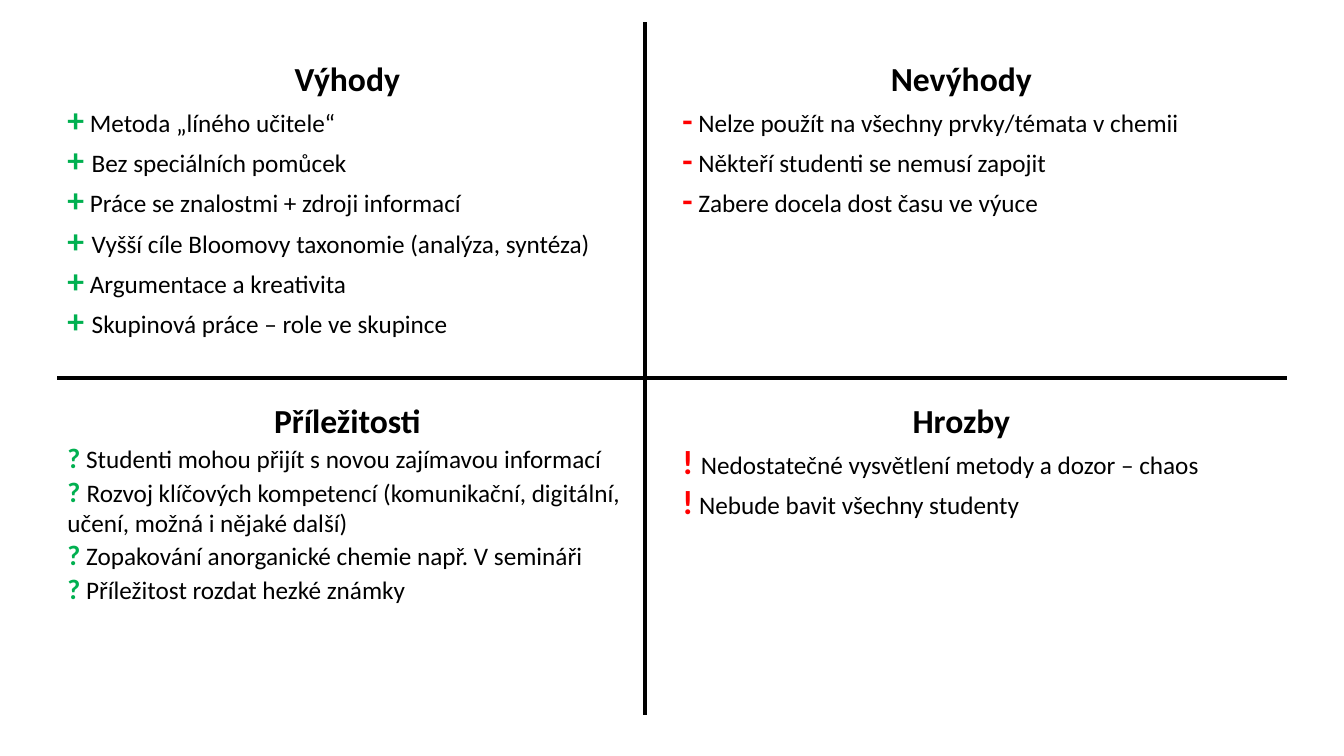
from lxml import etree
from pptx import Presentation
from pptx.dml.color import RGBColor
from pptx.enum import shapes, text
from pptx.oxml.ns import qn
from pptx.util import Inches, Pt

BLACK, GREEN, RED = "000000", "00B050", "FF0000"
LEFT, RIGHT = (0.57, 5.75), (6.67, 5.73)  # column start and width
TOP, BOTTOM = 0.53, 3.92

# Heading, column, top, height, mark colour, mark size, items.
# A bar parts the bold mark from the plain text.
QUADRANTS = [
    ("Nevýhody", RIGHT, TOP, 2.52, RED, 24, [
        "-| Nelze použít na všechny prvky/témata v chemii",
        "-| Někteří studenti se nemusí zapojit",
        "-| Zabere docela dost času ve výuce",
    ]),
    ("Výhody", LEFT, TOP, 2.93, GREEN, 24, [
        "+| Metoda „líného učitele“",
        "+ |Bez speciálních pomůcek",
        "+| Práce se znalostmi + zdroji informací",
        "+ |Vyšší cíle Bloomovy taxonomie (analýza, syntéza)",
        "+| Argumentace a kreativita",
        "+ |Skupinová práce – role ve skupince",
    ]),
    ("Příležitosti", LEFT, BOTTOM, 2.42, GREEN, 20, [
        "?| Studenti mohou přijít s novou zajímavou informací",
        "? |Rozvoj klíčových kompetencí (komunikační, digitální, "
        "učení, možná i nějaké další)",
        "?| Zopakování anorganické chemie např. V semináři",
        "?| Příležitost rozdat hezké známky",
    ]),
    ("Hrozby", RIGHT, BOTTOM, 1.62, RED, 24, [
        "! |Nedostatečné vysvětlení metody a dozor – chaos",
        "!| Nebude bavit všechny studenty",
    ]),
]


def color(code):
    return RGBColor.from_string(code)


class Board:
    """Holds the style and the current page."""
    font = "Calibri"
    heading_size = 24
    text_size = 18
    line_width = 3

    def __init__(self, page):
        self.page = page

    def line(self, x1, y1, x2, y2):
        line = self.page.shapes.add_connector(
            shapes.MSO_CONNECTOR.STRAIGHT,
            Inches(x1), Inches(y1), Inches(x2), Inches(y2))
        line.line.color.rgb = color(BLACK)
        line.line.width = Pt(self.line_width)
        etree.SubElement(line.element.spPr, qn("a:effectLst"))

    def span(self, para, words, size, code, bold):
        span = para.add_run()
        span.text = words
        span.font.name = self.font
        span.font.size = Pt(size)
        span.font.bold = bold
        span.font.color.rgb = color(code)

    def quadrant(self, heading, column, top, height, code, mark_size, items):
        left, width = column
        box = self.page.shapes.add_textbox(
            Inches(left), Inches(top), Inches(width), Inches(height))
        frame = box.text_frame
        frame.word_wrap = True
        frame.auto_size = text.MSO_AUTO_SIZE.SHAPE_TO_FIT_TEXT
        title = frame.paragraphs[0]
        title.alignment = text.PP_ALIGN.CENTER
        self.span(title, heading, self.heading_size, BLACK, True)
        for item in items:
            mark, words = item.split("|")
            para = frame.add_paragraph()
            self.span(para, mark, mark_size, code, True)
            self.span(para, words, self.text_size, BLACK, False)


def main():
    deck = Presentation()
    deck.slide_width, deck.slide_height = Inches(13.33), Inches(7.5)
    board = Board(deck.slides.add_slide(deck.slide_layouts[6]))
    board.line(6.4, 0.22, 6.4, 7.09)
    board.line(0.57, 3.75, 12.76, 3.75)
    for quadrant in QUADRANTS:
        board.quadrant(*quadrant)
    deck.save("out.pptx")


if __name__ == "__main__":
    main()
